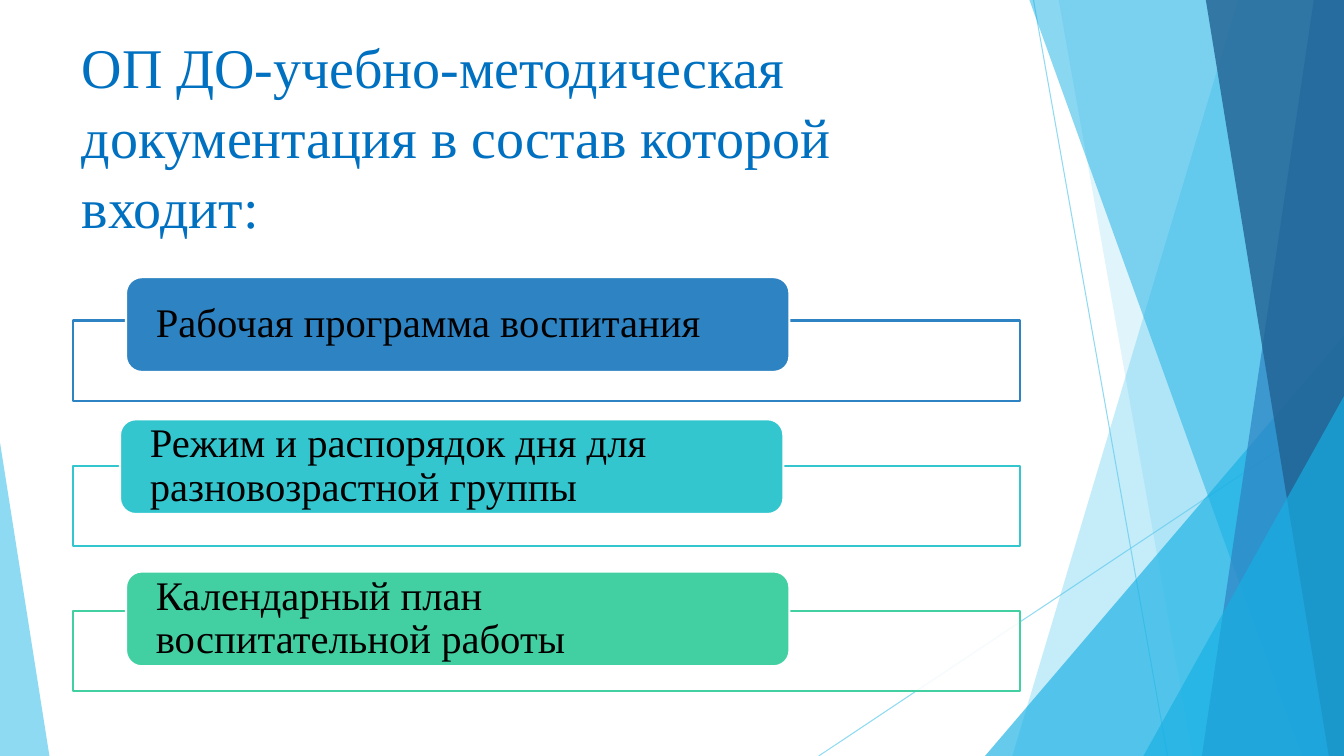
from lxml import etree
from pptx import Presentation
from pptx.dml.color import RGBColor
from pptx.enum.shapes import MSO_CONNECTOR, MSO_SHAPE
from pptx.enum.text import MSO_ANCHOR, PP_ALIGN
from pptx.oxml.ns import qn
from pptx.util import Inches, Pt

STRAIGHT = MSO_CONNECTOR.STRAIGHT
RECTANGLE = MSO_SHAPE.RECTANGLE
ROUNDED = MSO_SHAPE.ROUNDED_RECTANGLE
TRIANGLE = MSO_SHAPE.ISOSCELES_TRIANGLE
TOP, MIDDLE = MSO_ANCHOR.TOP, MSO_ANCHOR.MIDDLE
LEFT = PP_ALIGN.LEFT

WIDTH, HEIGHT = 13.33, 7.5
SKY, AZURE, BLUE, NAVY = "5FCBEF", "17B0E4", "2E83C3", "226292"


def paint(color_format, color, opacity=100):
    color_format.rgb = RGBColor.from_string(color)
    if opacity < 100:
        holder = color_format._xFill.find(qn("a:srgbClr"))
        etree.SubElement(holder, qn("a:alpha")).set("val", str(opacity * 1000))


class ProgramSlide:
    font = "Times New Roman"

    def __init__(self, deck):
        self.slide = deck.slides.add_slide(deck.slide_layouts[5])
        self.shapes = self.slide.shapes

    def fill(self, shape, color, opacity=100, outline=None):
        shape.shadow.inherit = False
        shape.fill.solid()
        paint(shape.fill.fore_color, color, opacity)
        if outline:
            shape.line.width = Pt(1.5)
            shape.line.fill.solid()
            paint(shape.line.fill.fore_color, outline)
        else:
            shape.line.fill.background()

    def set_text(self, frame, wording, size, color, spacing, anchor, insets):
        frame.word_wrap = True
        frame.vertical_anchor = anchor
        frame.margin_left = frame.margin_right = Inches(insets[0])
        frame.margin_top = frame.margin_bottom = Inches(insets[1])
        frame.text = wording
        paragraph = frame.paragraphs[0]
        paragraph.alignment = LEFT
        paragraph.line_spacing = spacing
        font = paragraph.runs[0].font
        font.name, font.size = self.font, Pt(size)
        paint(font.color, color)

    def title(self, wording, box):
        heading = self.shapes.title
        heading.left, heading.top, heading.width, heading.height = map(Inches, box)
        self.set_text(heading.text_frame, wording, 40, "0070C0", 1.04, TOP, (0.1, 0.05))

    def ray(self, start, end):
        ray = self.shapes.add_connector(STRAIGHT, *map(Inches, start + end))
        ray.line.width = Pt(0.75)
        ray.line.fill.solid()
        paint(ray.line.fill.fore_color, SKY, 70)
        etree.SubElement(ray._element.spPr, qn("a:effectLst"))

    def facet(self, top_left, bottom_left, color, opacity):
        outline = [(WIDTH, 0), (WIDTH, HEIGHT), (bottom_left, HEIGHT)]
        builder = self.shapes.build_freeform(Inches(top_left), 0)
        builder.add_line_segments([(Inches(x), Inches(y)) for x, y in outline], close=True)
        self.fill(builder.convert_to_shape(), color, opacity)

    def wedge(self, left, top, width, apex, color, opacity):
        box = map(Inches, (left, top, width, HEIGHT - top))
        wedge = self.shapes.add_shape(TRIANGLE, *box)
        wedge.adjustments[0] = apex
        self.fill(wedge, color, opacity)

    def frame(self, top, color):
        frame = self.shapes.add_shape(RECTANGLE, *map(Inches, (0.72, top, 9.4, 0.8)))
        self.fill(frame, "FFFFFF", 90, color)

    def card(self, left, top, wording, color):
        card = self.shapes.add_shape(ROUNDED, *map(Inches, (left, top, 6.58, 0.94)))
        self.fill(card, color, outline="FFFFFF")
        self.set_text(card.text_frame, wording, 29, "000000", 0.9, MIDDLE, (0.25, 0))


def main():
    deck = Presentation()
    deck.slide_width, deck.slide_height = Inches(WIDTH), Inches(HEIGHT)
    page = ProgramSlide(deck)

    page.ray((10.25, 0), (11.58, HEIGHT))
    page.ray((WIDTH, 4.03), (8.12, HEIGHT))
    page.facet(12.28, 10.04, SKY, 36)
    page.facet(10.5, 11.83, SKY, 20)
    page.wedge(9.77, 3.33, 3.56, 1, AZURE, 66)
    page.facet(10.21, 12.91, AZURE, 50)
    page.facet(13.03, 11.92, BLUE, 70)
    page.facet(11.96, 13.18, NAVY, 80)
    page.wedge(11.34, 3.93, 1.99, 1, AZURE, 66)
    page.wedge(0, 4.39, 0.49, 0, SKY, 70)

    page.title("ОП ДО-учебно-методическая документация в состав которой входит:",
               (0.71, 0.25, 9.4, 1.44))

    documents = [
        (1.25, 2.75, "Рабочая программа воспитания", BLUE),
        (1.19, 4.16, "Режим и распорядок дня для разновозрастной группы", "34C6CE"),
        (1.25, 5.67, "Календарный план воспитательной работы", "42D0A2"),
    ]
    for row, (left, top, wording, color) in enumerate(documents):
        page.frame(3.18 + 1.44 * row, color)
        page.card(left, top, wording, color)

    deck.save("out.pptx")


if __name__ == "__main__":
    main()
